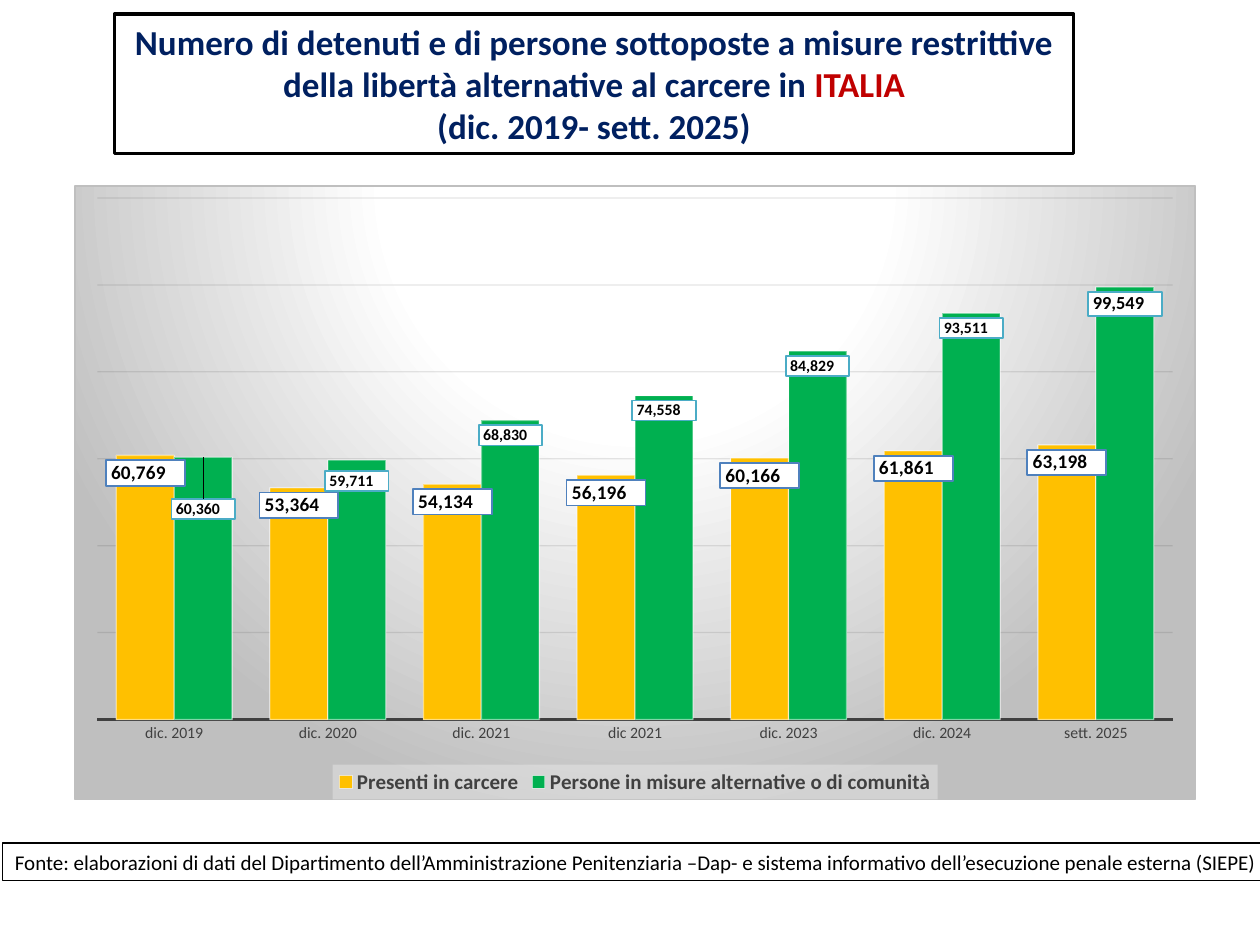
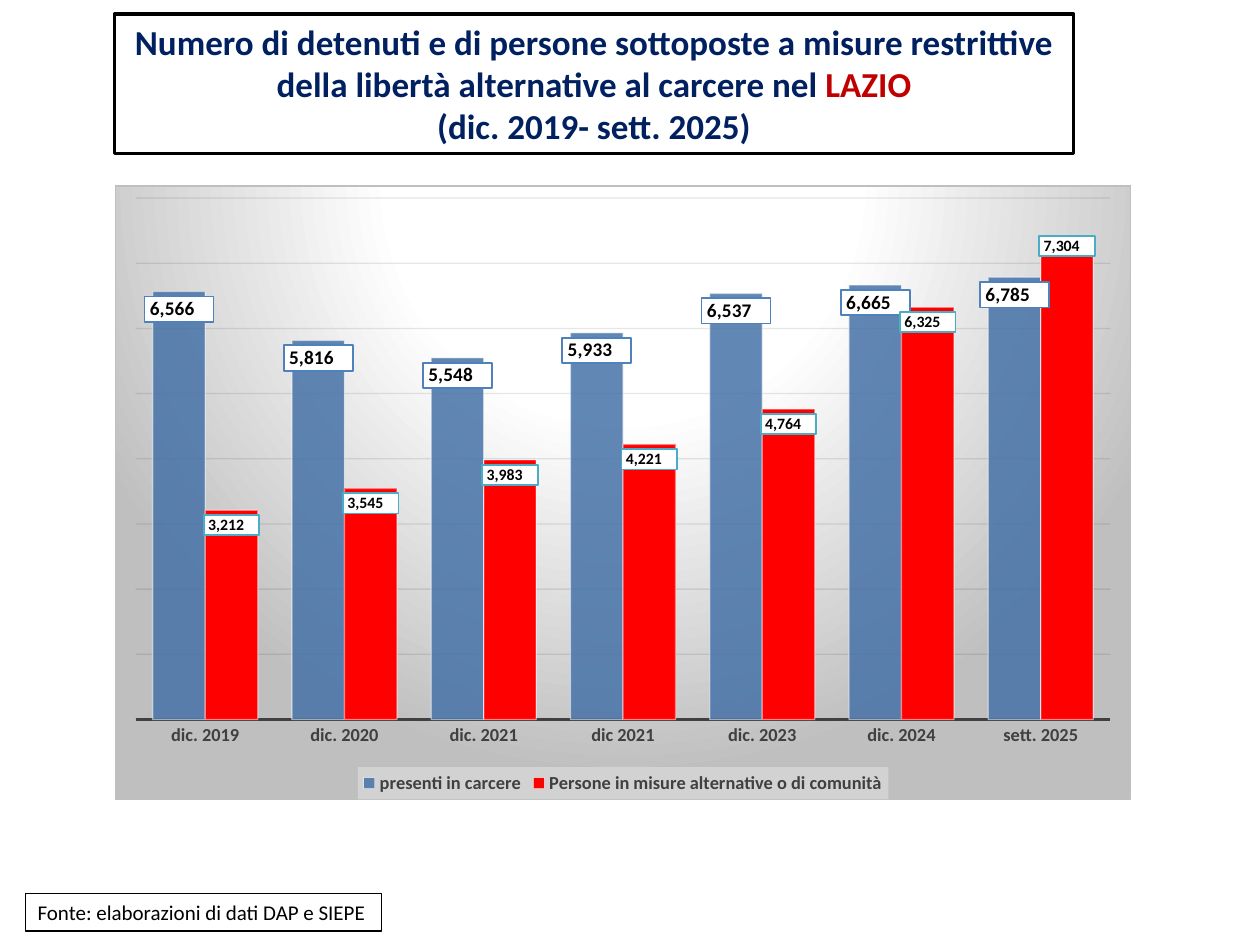
from copy import deepcopy

from pptx import Presentation
from pptx.chart.data import CategoryChartData
from pptx.dml.color import RGBColor
from pptx.enum.chart import XL_CHART_TYPE, XL_LABEL_POSITION, XL_LEGEND_POSITION, XL_TICK_MARK
from pptx.enum.text import MSO_ANCHOR, MSO_AUTO_SIZE, PP_ALIGN
from pptx.oxml import parse_xml
from pptx.oxml.ns import nsdecls, qn
from pptx.util import Inches, Pt

COLUMNS = XL_CHART_TYPE.COLUMN_CLUSTERED
INSIDE_END = XL_LABEL_POSITION.INSIDE_END
BOTTOM = XL_LEGEND_POSITION.BOTTOM
NO_TICK = XL_TICK_MARK.NONE
CENTER = PP_ALIGN.CENTER
TITLE_LAYOUT = 5

FONT = "Calibri"
NUMBER_FORMAT = '_-* #,##0\\ _€_-;\\-* #,##0\\ _€_-;_-* "-"?'
WHITE = RGBColor(0xFF, 0xFF, 0xFF)
BLACK = RGBColor(0, 0, 0)
NAVY = RGBColor(0x00, 0x20, 0x60)
DARK_RED = RGBColor(0xC0, 0x00, 0x00)
DARK_GREY = RGBColor(0x40, 0x40, 0x40)
GRID = RGBColor(0x0D, 0x0D, 0x0D)
SILVER = RGBColor(0xBF, 0xBF, 0xBF)
PALE_GREY = RGBColor(0xF2, 0xF2, 0xF2)
AMBER = RGBColor(0xFF, 0xC0, 0x00)
GREEN = RGBColor(0x00, 0xB0, 0x50)
STEEL_BLUE = RGBColor(0x46, 0x72, 0xA8)
RED = RGBColor(0xFF, 0x00, 0x00)
LABEL_BLUE = RGBColor(0x4F, 0x81, 0xBD)
LABEL_TEAL = RGBColor(0x4B, 0xAC, 0xC6)

PERIODS = ["dic. 2019", "dic. 2020", "dic. 2021", "dic 2021",
           "dic. 2023", "dic. 2024", "sett. 2025"]
ALTERNATIVES = "Persone in misure alternative o di comunità"


def set_font(font, size, color, bold=False):
    font.name = FONT
    font.size = Pt(size)
    font.bold = bold
    font.color.rgb = color


def add_run(paragraph, text, size, color, bold=False):
    run = paragraph.add_run()
    run.text = text
    set_font(run.font, size, color, bold)


def frame_box(shape, line_width):
    shape.fill.solid()
    shape.fill.fore_color.rgb = WHITE
    shape.line.color.rgb = BLACK
    shape.line.width = Pt(line_width)
    shape.text_frame.auto_size = MSO_AUTO_SIZE.SHAPE_TO_FIT_TEXT


def add_title(slide, lead, place):
    title = slide.shapes.title
    title.left, title.top = Inches(0.91), Inches(0.11)
    title.width, title.height = Inches(7.61), Inches(1.11)
    frame_box(title, 2)
    frame = title.text_frame
    frame.vertical_anchor = MSO_ANCHOR.TOP
    heading, dates = frame.paragraphs[0], frame.add_paragraph()
    heading.alignment = dates.alignment = CENTER
    add_run(heading, "Numero di detenuti e di persone sottoposte a misure restrittive "
            f"della libertà alternative al carcere {lead} ", 20, NAVY, True)
    add_run(heading, place, 20, DARK_RED, True)
    add_run(dates, "(dic. 2019- sett. 2025)", 20, NAVY, True)


def add_source(slide, text, left, top, width):
    box = slide.shapes.add_textbox(Inches(left), Inches(top), Inches(width), Inches(0.3))
    frame_box(box, 0.75)
    box.text_frame.word_wrap = False
    add_run(box.text_frame.paragraphs[0], text, 12, BLACK)


def solid_xml(color, opacity=100):
    return (f'<a:solidFill><a:srgbClr val="{color}"><a:alpha val="{opacity * 1000}"/>'
            '</a:srgbClr></a:solidFill>')


def line_xml(color, width, opacity=100):
    return f'<a:ln w="{Pt(width)}">{solid_xml(color, opacity)}</a:ln>'


def shape_properties(content):
    return parse_xml(f'<c:spPr {nsdecls("c", "a")}>{content}</c:spPr>')


def style_before_text(element, content):
    """Insert shape properties where the chart schema wants them: before c:txPr."""
    element.find(qn("c:txPr")).addprevious(shape_properties(content))


def manual_layout(x, y, size="", target=""):
    return parse_xml(f'<c:layout {nsdecls("c")}><c:manualLayout>{target}'
                     f'<c:x val="{x}"/><c:y val="{y}"/>{size}'
                     '</c:manualLayout></c:layout>')


def style_chart_area(chart):
    set_font(chart.font, 10, BLACK)
    gradient = "".join(
        f'<a:gs pos="{position * 1000}"><a:srgbClr val="{color}"/></a:gs>'
        for position, color in ((0, WHITE), (39, WHITE), (100, SILVER)))
    style_before_text(
        chart._chartSpace,
        f'<a:gradFill><a:gsLst>{gradient}</a:gsLst><a:path path="circle">'
        '<a:fillToRect l="50000" t="-80000" r="50000" b="180000"/></a:path></a:gradFill>'
        + line_xml(SILVER, 0.75))
    plot_area = chart._chartSpace.find(".//" + qn("c:plotArea"))
    for layout in plot_area.findall(qn("c:layout")):
        plot_area.remove(layout)
    plot_area.insert(0, manual_layout(
        0.02, 0.02, '<c:w val="0.96"/><c:h val="0.85"/>',
        '<c:layoutTarget val="inner"/><c:xMode val="edge"/><c:yMode val="edge"/>'))


def style_axes(chart, maximum, step, size, bold):
    category_axis, value_axis = chart.category_axis, chart.value_axis
    category_axis.major_tick_mark = category_axis.minor_tick_mark = NO_TICK
    category_axis.format.line.color.rgb = DARK_GREY
    category_axis.format.line.width = Pt(1.5)
    set_font(category_axis.tick_labels.font, size, DARK_GREY, bold)
    value_axis.visible = False
    value_axis.minimum_scale, value_axis.maximum_scale = 0, maximum
    value_axis.major_unit = step
    gridlines = value_axis.major_gridlines._xAx.find(qn("c:majorGridlines"))
    gridlines.append(shape_properties(line_xml(GRID, 0.75, 10)))


def add_legend(chart, size):
    chart.has_legend = True
    legend = chart.legend
    legend.position = BOTTOM
    legend.include_in_layout = False
    set_font(legend.font, size, DARK_GREY, True)
    style_before_text(legend._element, solid_xml(PALE_GREY, 39))


def style_series(series, color, opacity, label_size, label_line):
    properties = series._element.get_or_add_spPr()
    styled = shape_properties(solid_xml(color, opacity) + line_xml(WHITE, 0.75, 50))
    properties.getparent().replace(properties, styled)
    labels = series.data_labels
    labels.show_value = True
    labels.number_format = NUMBER_FORMAT
    labels.number_format_is_linked = False
    labels.position = INSIDE_END
    set_font(labels.font, label_size, BLACK, True)
    style_before_text(labels._element, solid_xml(WHITE) + line_xml(label_line, 1))


def adjust_label(series, index, down, size=9):
    """Shift one point's label down by a share of the chart height."""
    label = series.points[index].data_label
    set_font(label.font, size, BLACK, True)
    label.position = INSIDE_END
    shared = series.data_labels._element
    element = shared.xpath(f'c:dLbl[c:idx/@val="{index}"]')[0]
    for tag in ("c:numFmt", "c:spPr"):
        element.find(qn("c:txPr")).addprevious(deepcopy(shared.find(qn(tag))))
    if down:
        element.find(qn("c:idx")).addnext(manual_layout(0, down))


def add_column_chart(slide, left, width, series_rows, maximum, step,
                     axis_size, axis_bold, legend_size, label_changes):
    data = CategoryChartData()
    data.categories = PERIODS
    for name, values, *_ in series_rows:
        data.add_series(name, values)
    chart = slide.shapes.add_chart(COLUMNS, Inches(left), Inches(1.47),
                                   Inches(width), Inches(4.88), data).chart
    chart.has_title = False
    style_chart_area(chart)
    style_axes(chart, maximum, step, axis_size, axis_bold)
    add_legend(chart, legend_size)
    plot = chart.plots[0]
    plot.gap_width, plot.overlap = 65, 0
    plot.vary_by_categories = False
    label_styles = ((11, LABEL_BLUE), (9, LABEL_TEAL))
    for series, row, label_style in zip(plot.series, series_rows, label_styles):
        style_series(series, *row[2:], *label_style)
    for change in label_changes:
        adjust_label(plot.series[1], *change)


def main():
    presentation = Presentation()
    presentation.slide_width, presentation.slide_height = Inches(10), Inches(7.5)
    layout = presentation.slide_layouts[TITLE_LAYOUT]

    italy = presentation.slides.add_slide(layout)
    add_title(italy, "in", "ITALIA")
    add_source(italy, "Fonte: elaborazioni di dati del Dipartimento dell’Amministrazione "
               "Penitenziaria –Dap- e sistema informativo dell’esecuzione penale esterna "
               "(SIEPE)", 0.02, 6.69, 10.13)
    add_column_chart(
        italy, 0.59, 8.9,
        [("Presenti in carcere",
          [60769, 53364, 54134, 56196, 60166, 61861, 63198], AMBER, 100),
         (ALTERNATIVES, [60360, 59711, 68830, 74558, 84829, 93511, 99549], GREEN, 100)],
        maximum=120000, step=20000, axis_size=9, axis_bold=False, legend_size=12,
        label_changes=[(0, 0.06), (1, 0.01), (6, 0, 10.5)])

    lazio = presentation.slides.add_slide(layout)
    add_title(lazio, "nel", "LAZIO")
    add_source(lazio, "Fonte: elaborazioni di dati DAP e SIEPE", 0.2, 7.09, 2.83)
    add_column_chart(
        lazio, 0.91, 8.07,
        [("presenti in carcere", [6566, 5816, 5548, 5933, 6537, 6665, 6785], STEEL_BLUE, 85),
         (ALTERNATIVES, [3212, 3545, 3983, 4221, 4764, 6325, 7304], RED, 100)],
        maximum=8000, step=1000, axis_size=10.5, axis_bold=True, legend_size=10.5,
        label_changes=[(6, -0.02)])

    presentation.save("out.pptx")


if __name__ == "__main__":
    main()
